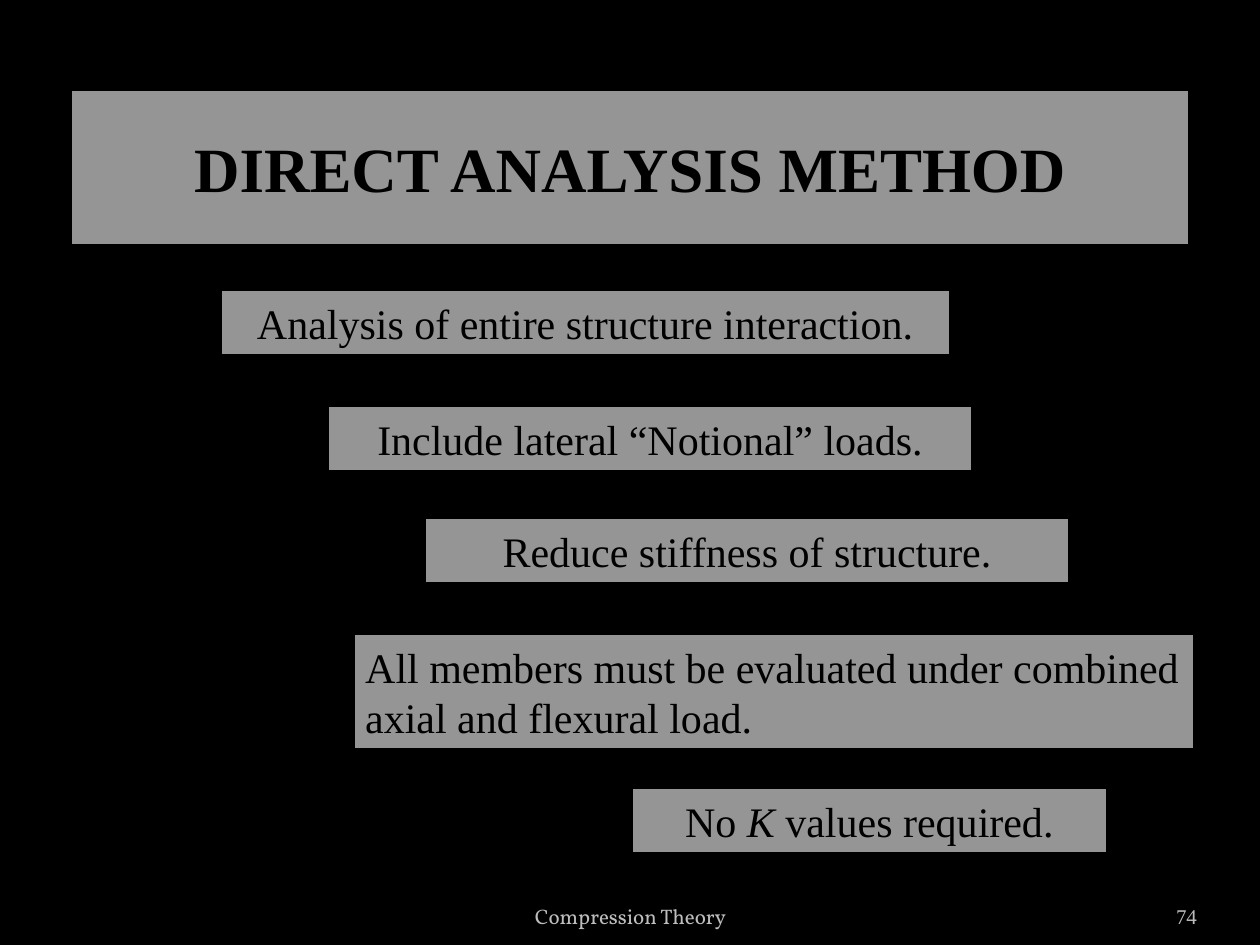
"""Build the Direct Analysis Method slide."""
from lxml import etree
from pptx import Presentation
from pptx.dml.color import RGBColor
from pptx.enum.shapes import MSO_SHAPE
from pptx.enum.text import MSO_ANCHOR, MSO_AUTO_SIZE, PP_ALIGN
from pptx.oxml.ns import qn
from pptx.util import Inches, Pt

RECTANGLE = MSO_SHAPE.RECTANGLE
MIDDLE, BOTTOM = MSO_ANCHOR.MIDDLE, MSO_ANCHOR.BOTTOM
GROW, FIXED = MSO_AUTO_SIZE.SHAPE_TO_FIT_TEXT, MSO_AUTO_SIZE.NONE
LEFT, CENTER, RIGHT = PP_ALIGN.LEFT, PP_ALIGN.CENTER, PP_ALIGN.RIGHT
SERIF = "Times New Roman"


def color(value):
    return RGBColor.from_string(value)


def write(box, texts, size, font_name, hex_color, align, anchor):
    frame = box.text_frame
    frame.word_wrap = True
    frame.vertical_anchor = anchor
    para = frame.paragraphs[0]
    para.alignment = align
    for text in texts:
        span = para.add_run()
        span.text = text
        span.font.size = Pt(size)
        span.font.name = font_name
        span.font.color.rgb = color(hex_color)
    return para


deck = Presentation()
deck.slide_width, deck.slide_height = Inches(10), Inches(7.5)
page = deck.slides.add_slide(deck.slide_layouts[6])
page.background.fill.solid()
page.background.fill.fore_color.rgb = color("000000")

panels = [
    (0.55, 0.7, 8.9, 1.26, 36, CENTER, ["DIRECT ANALYSIS METHOD"]),
    (1.74, 2.29, 5.81, 0.54, 24, CENTER, ["Analysis of entire structure interaction."]),
    (2.59, 3.21, 5.14, 0.54, 24, CENTER, ["Include lateral “Notional” loads."]),
    (3.36, 4.1, 5.14, 0.54, 24, CENTER, ["Reduce stiffness of structure."]),
    (2.8, 5.02, 6.69, 0.94, 24, LEFT,
     ["All members must be evaluated under combined axial and flexural load."]),
    (5, 6.24, 3.8, 0.54, 24, CENTER, ["No ", "K", " values required."]),
]
for left, top, width, height, size, align, texts in panels:
    panel = page.shapes.add_shape(
        RECTANGLE, Inches(left), Inches(top), Inches(width), Inches(height))
    panel.shadow.inherit = False
    panel.fill.solid()
    panel.fill.fore_color.rgb = color("F2F2F2")
    fill_color = panel.fill._xPr.find(qn("a:solidFill"))[0]
    etree.SubElement(fill_color, qn("a:alpha")).set("val", "62000")
    panel.line.color.rgb = color("000000")
    panel.line.width = Pt(3)
    para = write(panel, texts, size, SERIF, "000000", align, MIDDLE)
    is_title = size == 36
    panel.text_frame.auto_size = FIXED if is_title else GROW
    for span in para.runs:
        span.font.bold = is_title
        span.font.italic = span.text == "K"

number_box = page.shapes.add_textbox(Inches(8.67), Inches(7.02), Inches(0.83), Inches(0.4))
number_box.text_frame.margin_left = number_box.text_frame.margin_right = Inches(0)
write(number_box, ["74"], 12, SERIF, "BCBCBC", RIGHT, BOTTOM)

footer_box = page.shapes.add_textbox(Inches(3.42), Inches(7.02), Inches(3.17), Inches(0.4))
write(footer_box, ["Compression Theory"], 12, "Vollkorn", "BDBDBD", CENTER, BOTTOM)

deck.save("out.pptx")
